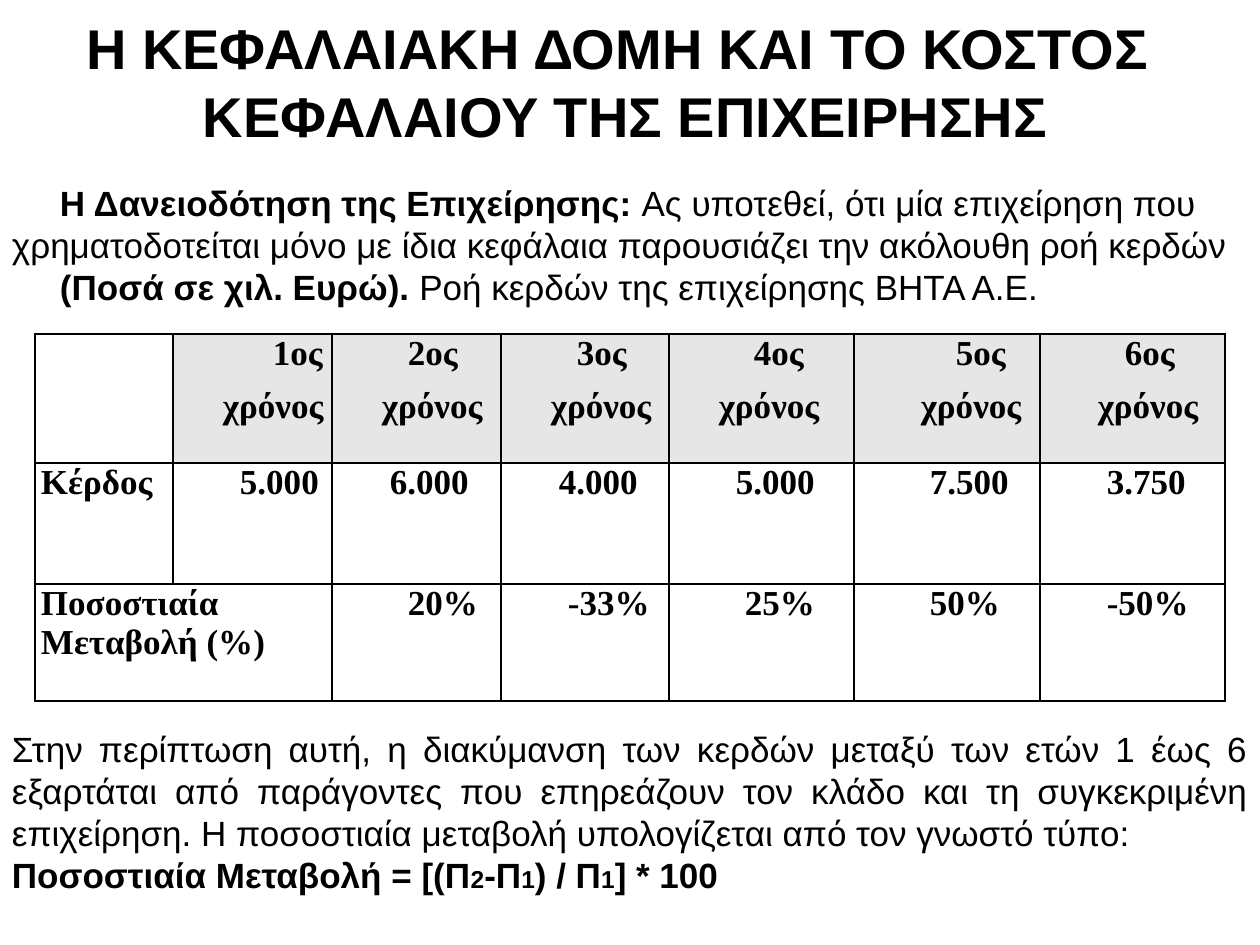
from pptx import Presentation
from pptx.dml.color import RGBColor
from pptx.enum.text import MSO_ANCHOR as Anchor, PP_ALIGN as Align
from pptx.oxml import parse_xml
from pptx.oxml.ns import nsdecls
from pptx.util import Pt

PX = 9144000 // 1260
SANS, SERIF = "Arial", "Times New Roman"
BLACK, GREY = "000000", "E6E6E6"
BOLD, SUB = {"bold": True}, {"bold": True, "size": Pt(14)}

TITLE = [[
    ("Η ΚΕΦΑΛΑΙΑΚΗ ΔΟΜΗ ΚΑΙ ΤΟ ΚΟΣΤΟΣ ", BOLD),
    ("\n", {}),
    ("ΚΕΦΑΛΑΙΟΥ ΤΗΣ ΕΠΙΧΕΙΡΗΣΗΣ", BOLD),
]]
INTRO = [
    [("Η Δανειοδότηση της Επιχείρησης: ", BOLD),
     ("Ας υποτεθεί, ότι μία επιχείρηση που χρηματοδοτείται μόνο με ίδια "
      "κεφάλαια παρουσιάζει την ακόλουθη ροή κερδών", {})],
    [("(Ποσά σε χιλ. Ευρώ). ", BOLD),
     ("Ροή κερδών της επιχείρησης ΒΗΤΑ Α.Ε.", {})],
]
NOTE = [
    [("Στην περίπτωση αυτή, η διακύμανση των κερδών μεταξύ των ετών 1 έως 6 "
      "εξαρτάται από παράγοντες που επηρεάζουν τον κλάδο και τη συγκεκριμένη "
      "επιχείρηση. Η ποσοστιαία μεταβολή υπολογίζεται από τον γνωστό τύπο:", {})],
    [("Ποσοστιαία Μεταβολή = [(Π", BOLD), ("2", SUB), ("-Π", BOLD), ("1", SUB),
     (") / Π", BOLD), ("1", SUB), ("] * 100", BOLD)],
]

BOXES = [
    (TITLE, (25, 26, 1201, 110), 32, (12, 6, 12, 6), Anchor.MIDDLE, Align.CENTER, 0),
    (INTRO, (0, 155, 1260, 160), 20, (12, 26, 12, 0), Anchor.TOP, Align.LEFT, 48),
    (NOTE, (0, 721, 1260, 183), 20, (12, 6, 12, 6), Anchor.TOP, Align.JUSTIFY, 0),
]

COLS = [138, 159, 169, 168, 185, 186, 185]
ROWS = [129, 121, 117]
SPOT = (35, 334)
YEAR = "χρόνος"
CELLS = [
    [[], [("1ος", 94), (YEAR, 44)], [("2ος", 70), (YEAR, 44)],
     [("3ος", 70), (YEAR, 44)], [("4ος", 79), (YEAR, 44)],
     [("5ος", 96), (YEAR, 61)], [("6ος", 79), (YEAR, 52)]],
    [[("Κέρδος", 0)], [("5.000", 61)], [("6.000", 52)], [("4.000", 52)],
     [("5.000", 61)], [("7.500", 70)], [("3.750", 61)]],
    [[("Ποσοστιαία Μεταβολή (%)", 0)], [], [("20%", 70)], [("-33%", 61)],
     [("25%", 70)], [("50%", 70)], [("-50%", 61)]],
]


def tint(code):
    """Turn a hex string into a colour."""
    return RGBColor.from_string(code)


def style(item, form):
    """Set each attribute in a dict of format values."""
    for key, val in form.items():
        setattr(item, key, val)


def pad(item, sides):
    """Set left, top, right and bottom margins in px."""
    names = ("margin_left", "margin_top", "margin_right", "margin_bottom")
    style(item, {name: val * PX for name, val in zip(names, sides)})


def write(para, text, name, size, form):
    """Add one run of black text, or a line break."""
    if text == "\n":
        para.add_line_break()
        return
    run = para.add_run()
    run.text = text
    style(run.font, {"name": name, "size": Pt(size), "bold": False, **form})
    run.font.color.rgb = tint(BLACK)


def paras(frame, items):
    """Yield a paragraph of the frame for each item."""
    for i, item in enumerate(items):
        yield (frame.add_paragraph() if i else frame.paragraphs[0]), item


def box(slide, lines, place, size, sides, anchor, align, dent):
    """Add a text box with its paragraphs."""
    frame = slide.shapes.add_textbox(*(v * PX for v in place)).text_frame
    style(frame, {"word_wrap": True, "vertical_anchor": anchor})
    pad(frame, sides)
    for para, runs in paras(frame, lines):
        para.alignment = align
        para._p.get_or_add_pPr().set("indent", str(dent * PX))
        for text, form in runs:
            write(para, text, SANS, size, form)


def rule(cell, row, col):
    """Draw heavy outer and header lines and light inner lines."""
    heavy = {
        "L": row == 0 or col < 2 or (row, col) == (2, 2),
        "R": row == 0 or col in (0, 6) or (row, col) == (2, 1),
        "T": row < 2,
        "B": row != 1 or col == 1,
    }
    props = cell._tc.get_or_add_tcPr()
    for side, thick in heavy.items():
        props.append(parse_xml(
            f'<a:ln{side} {nsdecls("a")} w="{Pt(1.5 if thick else 1)}">'
            f'<a:solidFill><a:srgbClr val="{BLACK}"/></a:solidFill></a:ln{side}>'))


def fill(cell, lines, row, col):
    """Give a cell its lines, fill and text."""
    pad(cell, (6, 0, 6, 0))
    rule(cell, row, col)
    if row == 0 and col:
        cell.fill.solid()
        cell.fill.fore_color.rgb = tint(GREY)
    else:
        cell.fill.background()
    gaps = (12, 0) if row else (4, 4)
    for para, (text, dent) in paras(cell.text_frame, lines):
        style(para, {"space_before": Pt(gaps[0]), "space_after": Pt(gaps[1])})
        para._p.get_or_add_pPr().set("marL", str(dent * PX))
        write(para, text, SERIF, 20, BOLD)


def grid(slide):
    """Add the table of earnings."""
    place = (*SPOT, sum(COLS), sum(ROWS))
    table = slide.shapes.add_table(
        len(ROWS), len(COLS), *(v * PX for v in place)).table
    style(table, {"first_row": False, "horz_banding": False})
    for col, wide in zip(table.columns, COLS):
        col.width = wide * PX
    for row, high in zip(table.rows, ROWS):
        row.height = high * PX
    table.cell(2, 0).merge(table.cell(2, 1))
    for r, line in enumerate(CELLS):
        for c, lines in enumerate(line):
            fill(table.cell(r, c), lines, r, c)


def main():
    """Build and save the slide."""
    deck = Presentation()
    style(deck, {"slide_width": 1260 * PX, "slide_height": 945 * PX})
    slide = deck.slides.add_slide(deck.slide_layouts[6])
    for item in BOXES:
        box(slide, *item)
    grid(slide)
    deck.save("out.pptx")


if __name__ == "__main__":
    main()
